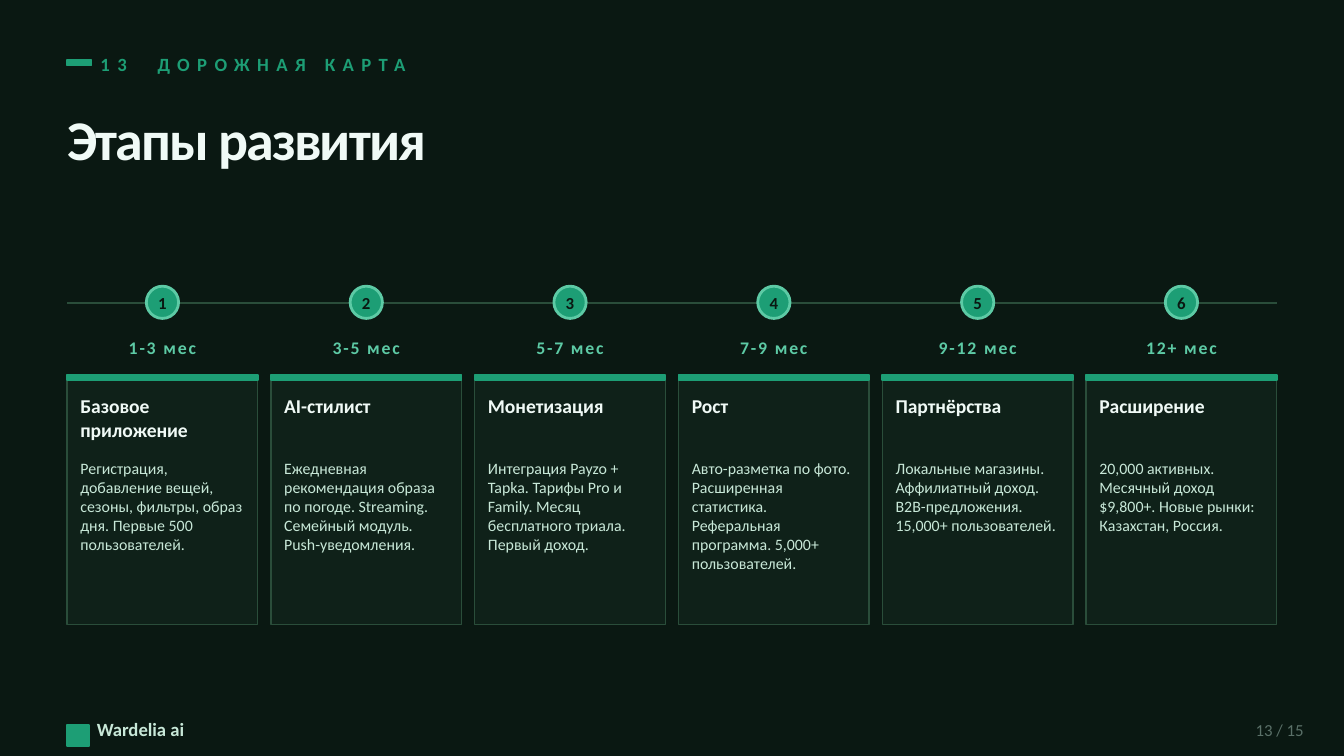
import pptx
import pptx.dml.color
import pptx.enum.shapes
import pptx.enum.text
import pptx.oxml.ns
import pptx.util
import lxml.etree

Cm = pptx.util.Cm
Pt = pptx.util.Pt
RGB = pptx.dml.color.RGBColor
SHAPE = pptx.enum.shapes.MSO_SHAPE
ALIGN = pptx.enum.text.PP_ALIGN
ANCHOR = pptx.enum.text.MSO_ANCHOR
qn = pptx.oxml.ns.qn

NIGHT = RGB(0x0A, 0x18, 0x12)
PANEL = RGB(0x0F, 0x21, 0x19)
GREEN = RGB(0x1D, 0x9E, 0x75)
MINT = RGB(0x5D, 0xCA, 0xA5)
BORDER = RGB(0x2A, 0x4D, 0x3A)
WHITE = RGB(0xF0, 0xFA, 0xF6)
PALE = RGB(0xC8, 0xE8, 0xD8)
GREY = RGB(0x5A, 0x70, 0x68)

GAP = 0.25
STAGES = [
    ("1-3 мес", "Базовое приложение",
     "Регистрация, добавление вещей, сезоны, фильтры, образ дня. Первые 500 пользователей."),
    ("3-5 мес", "AI-стилист",
     "Ежедневная рекомендация образа по погоде. Streaming. Семейный модуль. Push-уведомления."),
    ("5-7 мес", "Монетизация",
     "Интеграция Payzo + Tapka. Тарифы Pro и Family. Месяц бесплатного триала. Первый доход."),
    ("7-9 мес", "Рост",
     "Авто-разметка по фото. Расширенная статистика. Реферальная программа. 5,000+ пользователей."),
    ("9-12 мес", "Партнёрства",
     "Локальные магазины. Аффилиатный доход. B2B-предложения. 15,000+ пользователей."),
    ("12+ мес", "Расширение",
     "20,000 активных. Месячный доход $9,800+. Новые рынки: Казахстан, Россия."),
]


def write(sp, text, size, color, bold=True, align=ALIGN.LEFT, anchor=ANCHOR.MIDDLE, spacing=0):
    tf = sp.text_frame
    frame = {"word_wrap": True, "auto_size": pptx.enum.text.MSO_AUTO_SIZE.NONE,
             "vertical_anchor": anchor, "margin_left": 0, "margin_right": 0,
             "margin_top": 0, "margin_bottom": 0}
    for name, value in frame.items():
        setattr(tf, name, value)
    p = tf.paragraphs[0]
    p.alignment = align
    r = p.add_run()
    r.text = text
    for name, value in {"name": "Calibri", "size": Pt(size), "bold": bold}.items():
        setattr(r.font, name, value)
    r.font.color.rgb = color
    if spacing:
        r._r.get_or_add_rPr().set("spc", str(spacing * 100))
    return p


def add_text(s, box, text, size, color, **fmt):
    sp = s.shapes.add_textbox(*map(Cm, box))
    return write(sp, text, size, color, **fmt)


def add_block(s, kind, box, fill=GREEN, line=GREEN, width=1):
    sp = s.shapes.add_shape(kind, *map(Cm, box))
    sp.shadow.inherit = False
    sp.fill.solid()
    sp.fill.fore_color.rgb = fill
    sp.line.color.rgb = line
    sp.line.width = Pt(width)
    return sp


def add_header(s, x, y, w):
    add_block(s, SHAPE.RECTANGLE, (x, y + 0.28, 0.46, 0.1))
    p = add_text(s, (x + 0.63, y, 10.16, 0.71), "13\tДОРОЖНАЯ КАРТА", 10, GREEN, spacing=4)
    tabs = lxml.etree.SubElement(p._p.get_or_add_pPr(), qn("a:tabLst"))
    lxml.etree.SubElement(tabs, qn("a:tab"), pos=str(Cm(1.08)), algn="l")
    sp = s.shapes.title
    box = {"left": x, "top": y + 0.97, "width": w, "height": 1.57}
    for name, value in box.items():
        setattr(sp, name, Cm(value))
    write(sp, "Этапы развития", 30, WHITE, spacing=-1)


def add_stage(s, x, y, w, h, number, stage):
    period, name, details = stage
    dot = 0.61
    sp = add_block(s, SHAPE.OVAL, (x + (w - dot) / 2, y, dot, dot), GREEN, MINT, 1.5)
    write(sp, str(number), 9, NIGHT, align=ALIGN.CENTER)
    add_text(s, (x, y + 0.81, w, 0.71), period, 9.5, MINT, align=ALIGN.CENTER, spacing=1)

    top = y + 1.68
    pad = 0.25
    add_block(s, SHAPE.RECTANGLE, (x, top, w, h - 1.68), PANEL, BORDER, 0.75)
    add_block(s, SHAPE.RECTANGLE, (x, top, w, 0.1))
    inner = w - 2 * pad
    add_text(s, (x + pad, top + 0.36, inner, 1.17), name, 10.5, WHITE, anchor=ANCHOR.TOP)
    add_text(s, (x + pad, top + 1.58, inner, 3), details, 8.5, PALE,
             bold=False, anchor=ANCHOR.TOP)


def add_roadmap(s, x, y, w, h):
    axis = Cm(y + 0.31)
    line = s.shapes.add_connector(pptx.enum.shapes.MSO_CONNECTOR.STRAIGHT,
                                  Cm(x), axis, Cm(x + w), axis)
    line.line.color.rgb = BORDER
    line.line.width = Pt(1)
    lxml.etree.SubElement(line._element.spPr, qn("a:effectLst"))
    column = (w - GAP * (len(STAGES) - 1)) / len(STAGES)
    for i, stage in enumerate(STAGES):
        add_stage(s, x + i * (column + GAP), y, column, h, i + 1, stage)


def add_footer(s, x, y, right):
    add_block(s, SHAPE.RECTANGLE, (x, y + 0.2, 0.42, 0.4))
    add_text(s, (x + 0.56, y, 7.62, 0.56), "Wardelia ai", 10, PALE)
    add_text(s, (right - 1.78, y, 1.78, 0.56), "13 / 15", 9, GREY,
             bold=False, align=ALIGN.RIGHT)


def main():
    prs = pptx.Presentation()
    prs.slide_width, prs.slide_height = Cm(25.4), Cm(14.29)
    s = prs.slides.add_slide(prs.slide_layouts.get_by_name("Title Only"))
    s.background.fill.solid()
    s.background.fill.fore_color.rgb = NIGHT
    add_header(s, 1.27, 0.86, 22.86)
    add_roadmap(s, 1.27, 5.41, 22.86, 6.4)
    add_footer(s, 1.27, 13.51, 24.64)
    prs.save("out.pptx")


if __name__ == "__main__":
    main()
